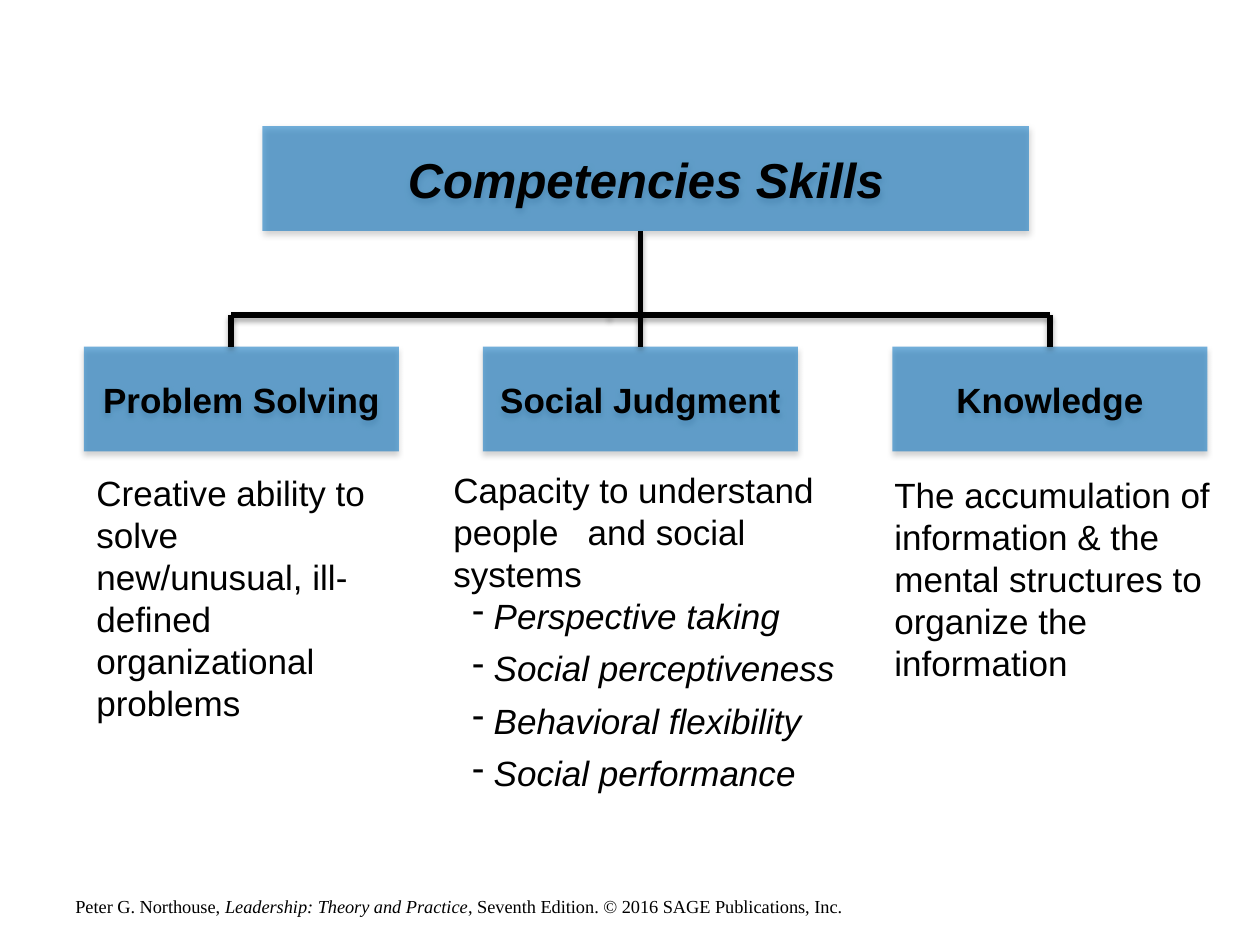
from dataclasses import dataclass

import lxml.etree
import pptx
import pptx.dml.color
import pptx.enum.shapes
import pptx.enum.text
import pptx.oxml
import pptx.oxml.ns
import pptx.util

BLACK = pptx.dml.color.RGBColor(0x00, 0x00, 0x00)
BLUE = pptx.dml.color.RGBColor(0x00, 0x70, 0xC0)
BLUE_OPACITY = 54
SANS, SERIF = "Arial", "Times New Roman"

# Grid: 120 columns by 90 rows, twelve to the inch
COLUMNS, ROWS = 120, 90
UNIT = pptx.util.Inches(10) // COLUMNS
BOX_ROWS, BRANCH_TOP, BRANCH_COLUMNS = 10, 33, 30
BUS_ROW, BUS_START = 30, 58


@dataclass
class Area:
    left: float
    top: float
    width: float
    height: float

    def lengths(self) -> list[int]:
        return [grid(value) for value in (self.left, self.top, self.width, self.height)]


@dataclass
class Shadow:
    opacity: int
    blur: float
    distance: float


@dataclass
class Branch:
    title: str
    left: float
    stem: float
    description: str
    text_area: Area
    points: tuple[str, ...] = ()


BOX_SHADOW = Shadow(32, 3.5, 2.2)
LINE_SHADOW = Shadow(35, 3.1, 1.8)
ROOT = Area(25, 12, 73, BOX_ROWS)
BRANCHES = [
    Branch("Problem Solving", 8, 22,
           "Creative ability to solve new/unusual, ill-defined organizational problems",
           Area(8, 44.3, 30, 25.4)),
    Branch("Social Judgment", 46, 61,
           "Capacity to understand people   and social systems",
           Area(42, 44, 42, 33.1),
           ("Perspective taking", "Social perceptiveness",
            "Behavioral flexibility", "Social performance")),
    Branch("Knowledge", 85, 100,
           "The accumulation of information & the mental structures to organize the information",
           Area(84, 44.5, 36, 21.4)),
]
CITATION = [("Peter G. Northouse, ", False),
            ("Leadership: Theory and Practice", True),
            (", Seventh Edition. © 2016 SAGE Publications, Inc.", False)]


def grid(value: float) -> int:
    return round(value * UNIT)


def add_shadow(shape, shadow: Shadow) -> None:
    """Give a shape or connector a soft shadow straight below it."""
    properties = shape._element.spPr
    for effects in properties.findall(pptx.oxml.ns.qn("a:effectLst")):
        properties.remove(effects)
    properties.append(pptx.oxml.parse_xml(
        f'<a:effectLst {pptx.oxml.ns.nsdecls("a")}>'
        f'<a:outerShdw blurRad="{pptx.util.Pt(shadow.blur)}" '
        f'dist="{pptx.util.Pt(shadow.distance)}" dir="5400000" rotWithShape="0">'
        f'<a:srgbClr val="{BLACK}"><a:alpha val="{shadow.opacity * 1000}"/></a:srgbClr>'
        '</a:outerShdw></a:effectLst>'))


def set_font(paragraph, size: float, name: str = SANS) -> None:
    paragraph.font.size = pptx.util.Pt(size)
    paragraph.font.name = name
    paragraph.font.color.rgb = BLACK


def add_box(slide, area: Area, text: str, size: float, italic: bool = False):
    box = slide.shapes.add_shape(
        pptx.enum.shapes.MSO_SHAPE.RECTANGLE, *area.lengths())
    box.fill.solid()
    box.fill.fore_color.rgb = BLUE
    color = box._element.spPr.find(".//" + pptx.oxml.ns.qn("a:srgbClr"))
    lxml.etree.SubElement(color, pptx.oxml.ns.qn("a:alpha"), val=str(BLUE_OPACITY * 1000))
    box.line.fill.background()
    add_shadow(box, BOX_SHADOW)
    frame = box.text_frame
    frame.word_wrap = False
    frame.vertical_anchor = pptx.enum.text.MSO_ANCHOR.MIDDLE
    paragraph = frame.paragraphs[0]
    paragraph.text = text
    paragraph.alignment = pptx.enum.text.PP_ALIGN.CENTER
    set_font(paragraph, size)
    paragraph.font.bold = True
    paragraph.font.italic = italic
    return box


def add_line(slide, start: tuple[float, float], end: tuple[float, float]):
    line = slide.shapes.add_connector(
        pptx.enum.shapes.MSO_CONNECTOR.STRAIGHT,
        *(grid(value) for value in start + end))
    line.line.color.rgb = BLACK
    line.line.width = pptx.util.Pt(3)
    add_shadow(line, LINE_SHADOW)
    return line


def add_text_frame(slide, area: Area):
    frame = slide.shapes.add_textbox(*area.lengths()).text_frame
    frame.word_wrap = True
    frame.auto_size = pptx.enum.text.MSO_AUTO_SIZE.SHAPE_TO_FIT_TEXT
    return frame


def add_dash_point(frame, text: str) -> None:
    paragraph = frame.add_paragraph()
    paragraph.text = text
    paragraph.space_after = pptx.util.Pt(6)
    properties = paragraph._p.get_or_add_pPr()
    properties.set("marL", str(pptx.util.Inches(0.32)))
    properties.set("indent", str(pptx.util.Inches(-0.17)))
    lxml.etree.SubElement(properties, pptx.oxml.ns.qn("a:buChar"), char="-")
    set_font(paragraph, 20)
    paragraph.font.italic = True


def add_branch(slide, branch: Branch) -> None:
    area = Area(branch.left, BRANCH_TOP, BRANCH_COLUMNS, BOX_ROWS)
    box = add_box(slide, area, branch.title, 20)
    stem = add_line(slide, (branch.stem, BUS_ROW), (branch.stem, BRANCH_TOP))
    if branch.stem == area.left + area.width / 2:
        stem.end_connect(box, 0)
    frame = add_text_frame(slide, branch.text_area)
    frame.text = branch.description
    set_font(frame.paragraphs[0], 20)
    for point in branch.points:
        add_dash_point(frame, point)


def main() -> None:
    presentation = pptx.Presentation()
    presentation.slide_width = COLUMNS * UNIT
    presentation.slide_height = ROWS * UNIT
    slide = presentation.slides.add_slide(presentation.slide_layouts[6])

    # Hierarchy
    add_box(slide, ROOT, "Competencies Skills", 28, italic=True)
    for branch in BRANCHES:
        add_branch(slide, branch)

    # Trunk and the two halves of the horizontal bus
    trunk = BRANCHES[1].stem
    add_line(slide, (trunk, ROOT.top + ROOT.height), (trunk, BUS_ROW))
    for branch in (BRANCHES[-1], BRANCHES[0]):
        add_line(slide, (BUS_START, BUS_ROW), (branch.stem, BUS_ROW))

    # Citation
    paragraph = add_text_frame(slide, Area(6, 84.7, 114, 3.4)).paragraphs[0]
    for text, italic in CITATION:
        run = paragraph.add_run()
        run.text = text
        run.font.italic = italic
    set_font(paragraph, 10.5, SERIF)

    presentation.save("out.pptx")


if __name__ == "__main__":
    main()
